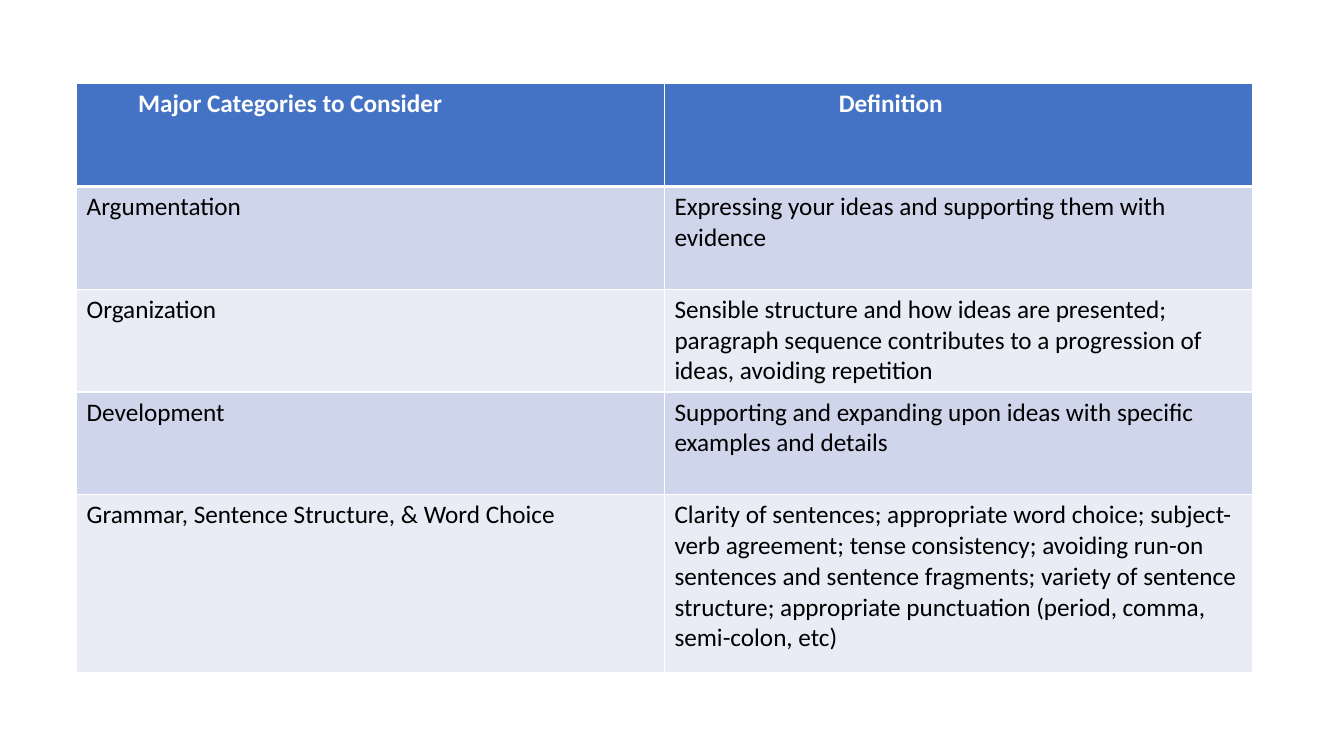
from typing import NamedTuple

from lxml.etree import SubElement as Sub
from pptx import Presentation
from pptx.dml.color import RGBColor as Rgb
from pptx.oxml.ns import qn
from pptx.util import Inches, Pt

WHITE = Rgb(0xFF, 0xFF, 0xFF)
BLACK = Rgb(0x00, 0x00, 0x00)
BLUE = Rgb(0x44, 0x72, 0xC4)
BANDS = (Rgb(0xE9, 0xEB, 0xF5), Rgb(0xCF, 0xD5, 0xEA))

# Grid: two equal columns, rows in inches
LEFT, TOP = 0.76, 0.83
COL, ROW, TALL = 5.83, 1.02, 1.76
PAD = 0.1
THIN, THICK = 1, 3


class Entry(NamedTuple):
    topic: str
    meaning: str
    height: float = ROW
    insets: tuple[float, float] = (PAD, PAD)


ENTRIES = [
    Entry("Major Categories to Consider", "Definition", insets=(0.61, 1.73)),
    Entry("Argumentation",
          "Expressing your ideas and supporting them with evidence"),
    Entry("Organization",
          "Sensible structure and how ideas are presented; paragraph sequence "
          "contributes to a progression of ideas, avoiding repetition"),
    Entry("Development",
          "Supporting and expanding upon ideas with specific examples and details"),
    Entry("Grammar, Sentence Structure, & Word Choice",
          "Clarity of sentences; appropriate word choice; subject-verb agreement; "
          "tense consistency; avoiding run-on sentences and sentence fragments; "
          "variety of sentence structure; appropriate punctuation (period, comma, "
          "semi-colon, etc)", TALL),
]


def add_rules(cell, top: float, base: float) -> None:
    """Draw the white lines around a cell; call before filling it."""
    props = cell._tc.get_or_add_tcPr()
    for side, width in (("L", THIN), ("R", THIN), ("T", top), ("B", base)):
        line = Sub(props, qn(f"a:ln{side}"), w=str(Pt(width)))
        Sub(Sub(line, qn("a:solidFill")), qn("a:srgbClr"), val=str(WHITE))


def fill_cell(cell, text: str, row: int, inset: float) -> None:
    head = row == 0
    add_rules(cell, THICK if row == 1 else THIN, THICK if head else THIN)
    cell.fill.solid()
    cell.fill.fore_color.rgb = BLUE if head else BANDS[row % 2]
    cell.margin_left = Inches(inset)
    cell.text_frame.text = text
    font = cell.text_frame.paragraphs[0].runs[0].font
    font.name, font.size, font.bold = "Calibri", Pt(18), head
    font.color.rgb = WHITE if head else BLACK


def main() -> None:
    deck = Presentation()
    deck.slide_width, deck.slide_height = Inches(13.33), Inches(7.5)
    slide = deck.slides.add_slide(deck.slide_layouts[6])

    # Table of categories
    total = sum(entry.height for entry in ENTRIES)
    table = slide.shapes.add_table(
        len(ENTRIES), 2, Inches(LEFT), Inches(TOP),
        Inches(2 * COL), Inches(total)).table
    for row, entry in enumerate(ENTRIES):
        table.rows[row].height = Inches(entry.height)
        for col, text in enumerate((entry.topic, entry.meaning)):
            fill_cell(table.cell(row, col), text, row, entry.insets[col])

    deck.save("out.pptx")


if __name__ == "__main__":
    main()
